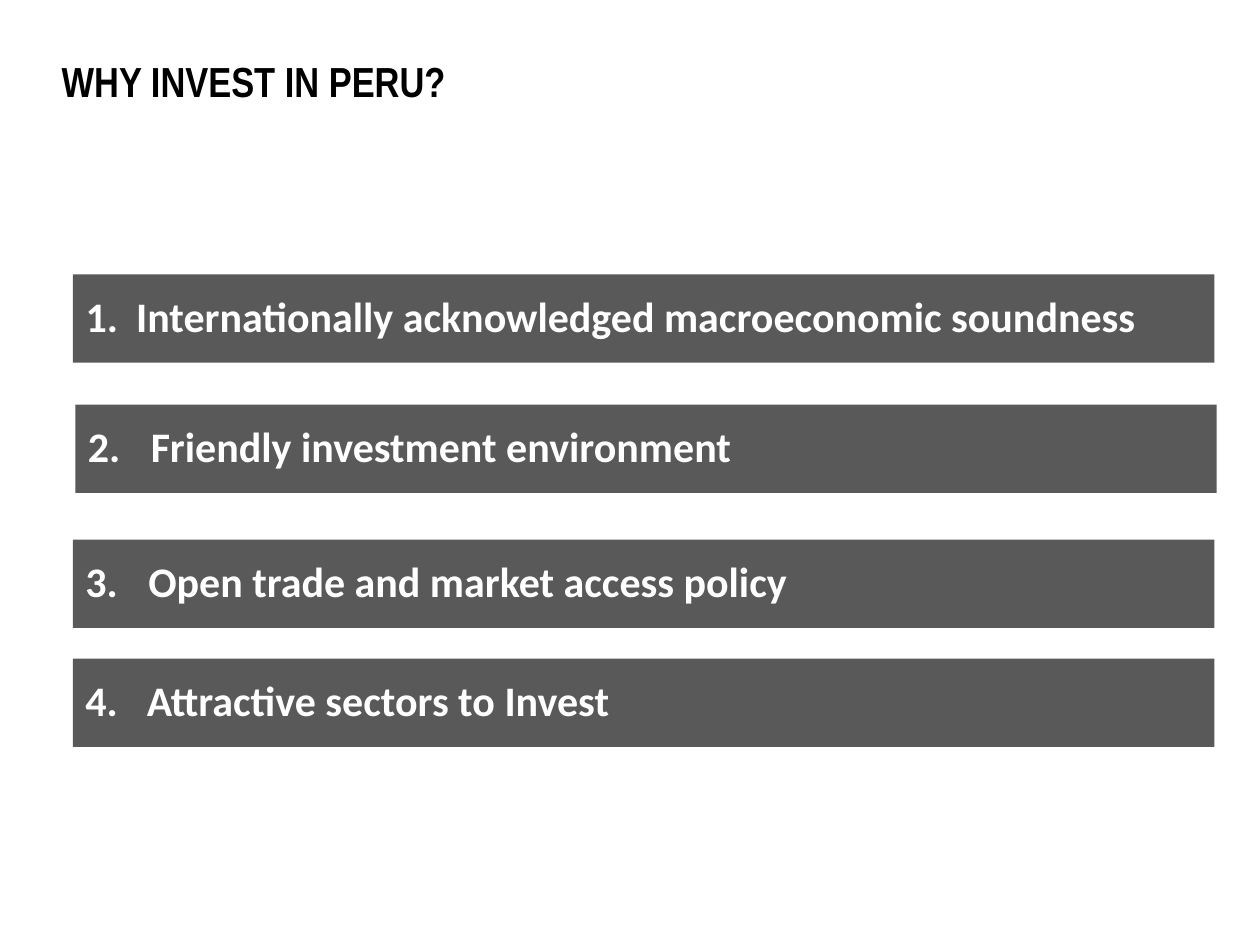
from dataclasses import dataclass

from lxml.etree import SubElement
from pptx import Presentation
from pptx.dml.color import RGBColor
from pptx.enum.shapes import MSO_SHAPE as ShapeKind
from pptx.enum.text import MSO_ANCHOR as Anchor, MSO_AUTO_SIZE as AutoSize, PP_ALIGN as Align
from pptx.oxml.ns import qn
from pptx.util import Cm, Pt

COLORS = {"bar": "595959", "bar_text": "FFFFFF", "title": "000000"}
BAR_WIDTH, BAR_HEIGHT = 23.01, 1.78


@dataclass
class Reason:
    text: str
    left: float
    top: float
    indent: float


REASONS = [
    Reason("Internationally acknowledged macroeconomic soundness", 1.47, 5.53, 1.02),
    Reason("Friendly investment environment", 1.52, 8.16, 1.27),
    Reason("Open trade and market access policy", 1.47, 10.88, 1.27),
    Reason("Attractive sectors to Invest", 1.47, 13.28, 1.24),
]


def place(shape, left: float, top: float, width: float, height: float) -> None:
    shape.left, shape.top = Cm(left), Cm(top)
    shape.width, shape.height = Cm(width), Cm(height)


def number_paragraph(para, number: int, indent: float, color: str, font: str) -> None:
    properties = para._p.get_or_add_pPr()
    properties.set("marL", str(Cm(indent)))
    properties.set("indent", str(-Cm(indent)))
    bullet_color = SubElement(properties, qn("a:buClr"))
    SubElement(bullet_color, qn("a:srgbClr"), val=color)
    SubElement(properties, qn("a:buFont"), typeface=font)
    SubElement(properties, qn("a:buAutoNum"), type="arabicPeriod", startAt=str(number))


def write_text(shape, text: str, *, font: str, color: str, anchor: Anchor,
               line_spacing: float = 1.0, number: int = 0, indent: float = 0) -> None:
    frame = shape.text_frame
    frame.word_wrap = True
    frame.auto_size = AutoSize.NONE
    frame.vertical_anchor = anchor
    para = frame.paragraphs[0]
    if number:
        number_paragraph(para, number, indent, color, font)
    para.alignment = Align.LEFT
    para.line_spacing = line_spacing
    para.space_before = Pt(0)
    span = para.add_run()
    span.text = text
    span.font.name = font
    span.font.size = Pt(24)
    span.font.bold = True
    span.font.color.rgb = RGBColor.from_string(color)


def draw_reason(shape, reason: Reason, number: int) -> None:
    place(shape, reason.left, reason.top, BAR_WIDTH, BAR_HEIGHT)
    shape.shadow.inherit = False
    shape.fill.solid()
    shape.fill.fore_color.rgb = RGBColor.from_string(COLORS["bar"])
    shape.line.fill.background()
    write_text(shape, reason.text, font="Calibri", color=COLORS["bar_text"],
               anchor=Anchor.MIDDLE, line_spacing=0.9, number=number, indent=reason.indent)


def main() -> None:
    deck = Presentation()
    deck.slide_width, deck.slide_height = Cm(25.4), Cm(19.05)
    page = deck.slides.add_slide(deck.slide_layouts[1])

    title = page.shapes.title
    place(title, 0.99, 0.99, 12.9, 1.28)
    write_text(title, "WHY INVEST IN PERU?", font="Arial Narrow",
               color=COLORS["title"], anchor=Anchor.TOP)

    for number, reason in enumerate(REASONS, start=1):
        if number == 1:
            bar = page.placeholders[1]
        else:
            bar = page.shapes.add_shape(ShapeKind.RECTANGLE, 0, 0, 0, 0)
        draw_reason(bar, reason, number)

    deck.save("out.pptx")


if __name__ == "__main__":
    main()
